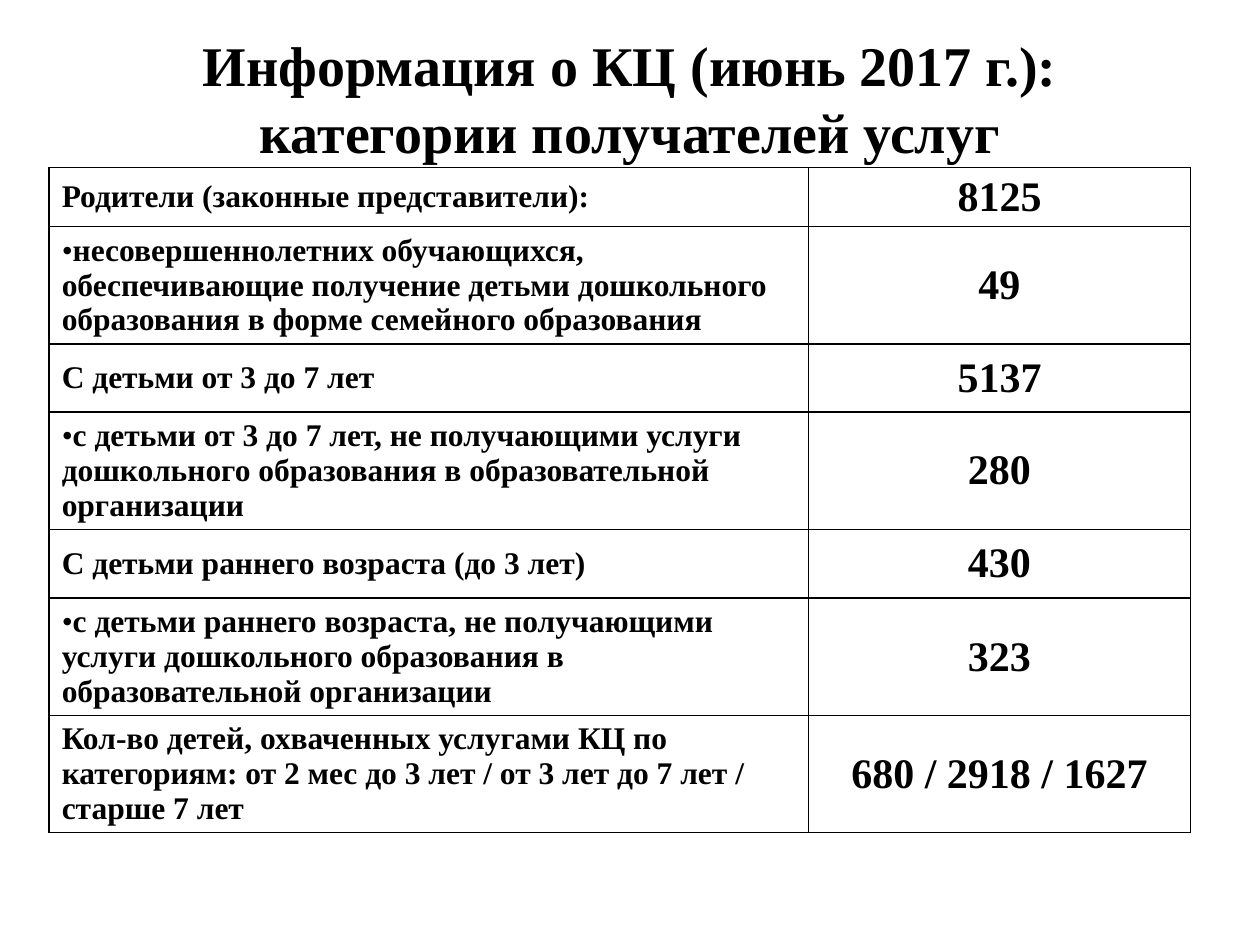
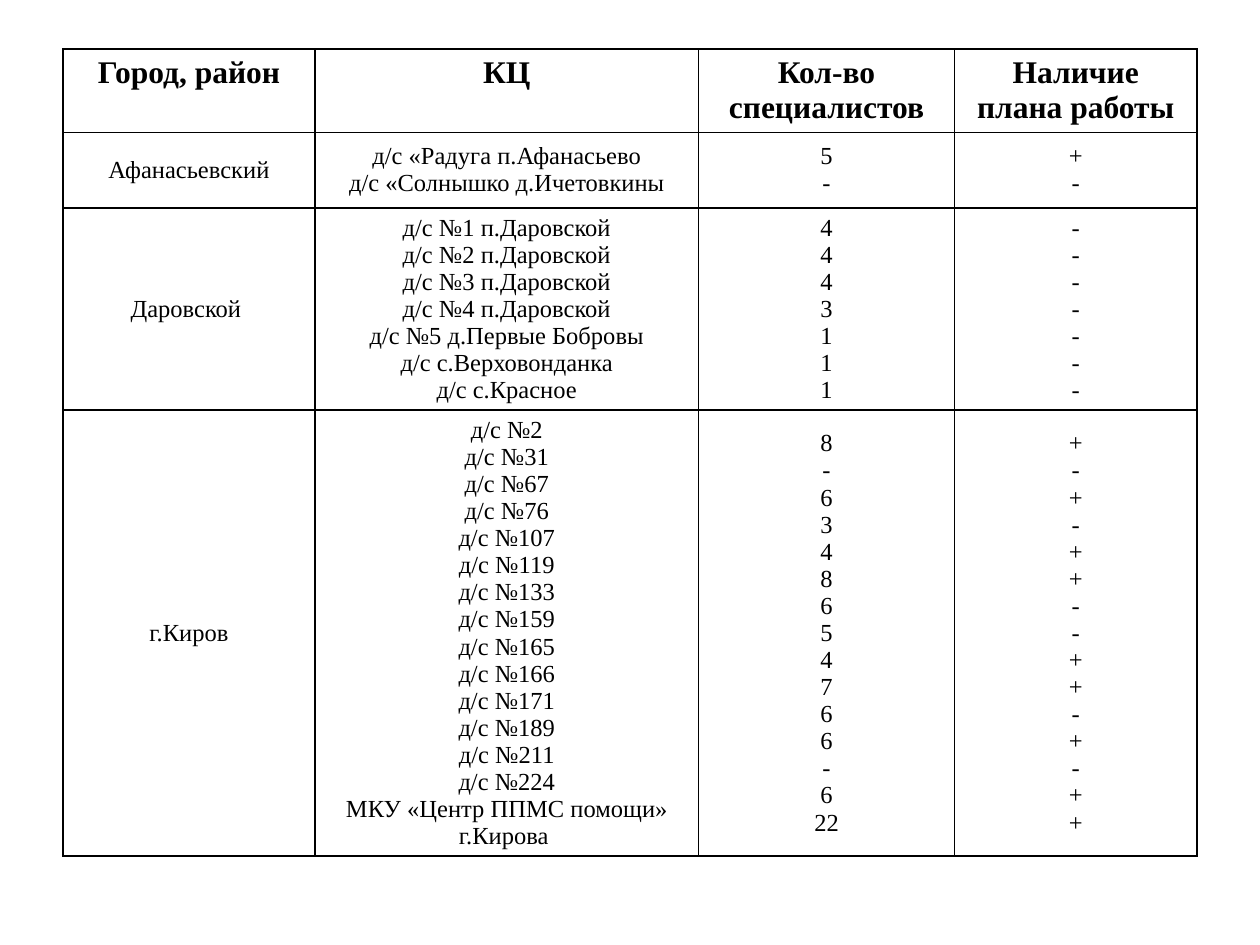
import lxml.etree
import pptx
import pptx.dml.color
import pptx.enum.text
import pptx.oxml.ns
import pptx.util

ALIGN = pptx.enum.text.PP_ALIGN
ANCHOR = pptx.enum.text.MSO_ANCHOR
FACE = "Times New Roman"

# Theme: colours, type sizes, the rule around cells and line height in tables
theme = {
    "ink": pptx.dml.color.RGBColor.from_string("000000"),
    "paper": pptx.dml.color.RGBColor.from_string("FFFFFF"),
    "rule": pptx.util.Pt(1),
    "leading": 1.107,
    "title": {"name": FACE, "size": pptx.util.Pt(32), "bold": True},
    "figure": {"name": FACE, "size": pptx.util.Pt(24), "bold": True},
    "label": {"name": FACE, "size": pptx.util.Pt(18), "bold": True},
    "entry": {"name": FACE, "size": pptx.util.Pt(14), "bold": False},
}

deck = pptx.Presentation()
deck.slide_width = pptx.util.Inches(10)
deck.slide_height = pptx.util.Inches(7.5)
# One percent of the slide's width and height
across, down = deck.slide_width / 100, deck.slide_height / 100
blank = deck.slide_layouts[6]


def write(frame, lines, style, align=ALIGN.CENTER):
    """Fill a text frame, one paragraph a line, in a theme style."""
    frame.text = "\n".join(lines)
    for paragraph in frame.paragraphs:
        paragraph.alignment = align
        if style != "title":
            size = theme[style]["size"].pt
            paragraph.line_spacing = pptx.util.Pt(size * theme["leading"])
        for run in paragraph.runs:
            for key, value in theme[style].items():
                setattr(run.font, key, value)
            run.font.color.rgb = theme["ink"]


def ruled_table(slide, left, top, columns, rows):
    """Add a plain table with ruled cells; lengths are percent of the slide."""
    grid = slide.shapes.add_table(
        len(rows), len(columns), int(left * across), int(top * down),
        int(sum(columns) * across), int(sum(rows) * down)).table
    grid.first_row = grid.horz_banding = False
    for column, share in zip(grid.columns, columns):
        column.width = int(share * across)
    for row, share in zip(grid.rows, rows):
        row.height = int(share * down)
    for cell in grid.iter_cells():
        properties = cell._tc.get_or_add_tcPr()
        for side in ("a:lnL", "a:lnR", "a:lnT", "a:lnB"):
            rule = lxml.etree.SubElement(
                properties, pptx.oxml.ns.qn(side), w=str(theme["rule"]))
            paint = lxml.etree.SubElement(rule, pptx.oxml.ns.qn("a:solidFill"))
            lxml.etree.SubElement(
                paint, pptx.oxml.ns.qn("a:srgbClr"), val=str(theme["ink"]))
        cell.fill.solid()
        cell.fill.fore_color.rgb = theme["paper"]
        cell.vertical_anchor = ANCHOR.MIDDLE
    return grid


# Slide 1: categories of service recipients
recipients_slide = deck.slides.add_slide(blank)

heading = recipients_slide.shapes.add_textbox(
    int(5 * across), int(4 * down), int(90 * across), int(12.67 * down)).text_frame
heading.word_wrap = True
heading.vertical_anchor = ANCHOR.MIDDLE
write(heading, ["Информация о КЦ (июнь 2017 г.):\vкатегории получателей услуг"],
      "title")

# Each category: bulleted or not, wording, count
categories = [
    (False, "Родители (законные представители):", "8125"),
    (True, "несовершеннолетних обучающихся, обеспечивающие получение детьми "
           "дошкольного образования в форме семейного образования", "49"),
    (False, "С детьми от 3 до 7 лет", "5137"),
    (True, "с детьми от 3 до 7 лет, не получающими услуги дошкольного "
           "образования в образовательной организации", "280"),
    (False, "С детьми раннего возраста (до 3 лет)", "430"),
    (True, "с детьми раннего возраста, не получающими услуги дошкольного "
           "образования в образовательной организации", "323"),
    (False, "Кол-во детей, охваченных услугами КЦ по категориям: от 2 мес до "
            "3 лет / от 3 лет до 7 лет / старше 7 лет", "680 / 2918 / 1627"),
]
recipients = ruled_table(recipients_slide, 3.9, 17.73, [60.25, 30.35],
                         [6.2, 12.4, 7.2, 12.4, 7.3, 12.4, 12.4])
for index, (bulleted, category, count) in enumerate(categories):
    category_frame = recipients.cell(index, 0).text_frame
    write(category_frame, [category], "label", ALIGN.LEFT)
    write(recipients.cell(index, 1).text_frame, [count], "figure")
    if bulleted:
        bullet_home = category_frame.paragraphs[0]._p.get_or_add_pPr()
        bullet_home.set("marL", "0")
        bullet_home.set("indent", "0")
        lxml.etree.SubElement(
            bullet_home, pptx.oxml.ns.qn("a:buFont"), typeface=FACE)
        lxml.etree.SubElement(bullet_home, pptx.oxml.ns.qn("a:buChar"), char="•")

# Slide 2: consulting centres by district
centres_slide = deck.slides.add_slide(blank)
headers = ["Город, район", "КЦ", "Кол-во специалистов", "Наличие плана работы"]

# Each district: centres, number of specialists, presence of a work plan
kirov_numbers = [2, 31, 67, 76, 107, 119, 133, 159, 165, 166, 171, 189, 211, 224]
districts = [
    ("Афанасьевский",
     ["д/с «Радуга п.Афанасьево", "д/с «Солнышко д.Ичетовкины"],
     "5 -", "+ -"),
    ("Даровской ",
     [f"д/с №{number} п.Даровской" for number in range(1, 5)]
     + ["д/с №5 д.Первые Бобровы", "д/с с.Верховонданка", "д/с с.Красное"],
     "4 4 4 3 1 1 1", "- - - - - - -"),
    ("г.Киров",
     [f"д/с №{number}" for number in kirov_numbers]
     + ["МКУ «Центр ППМС помощи» г.Кирова "],
     "8 - 6 3 4 8 6 5 4 7 6 6 - 6 22", "+ - + - + + - - + + - + - + +"),
]
centres = ruled_table(centres_slide, 5, 5.2, [20, 30.45, 20.3, 19.25],
                      [8.8, 8, 21.4, 47.2])
for column, header in enumerate(headers):
    centres.cell(0, column).vertical_anchor = ANCHOR.TOP
    write(centres.cell(0, column).text_frame, [header], "label")
for row, (district, names, specialists, plans) in enumerate(districts, start=1):
    entries = [[district], names, specialists.split(), plans.split()]
    for column, lines in enumerate(entries):
        write(centres.cell(row, column).text_frame, lines, "entry")

deck.save("out.pptx")
